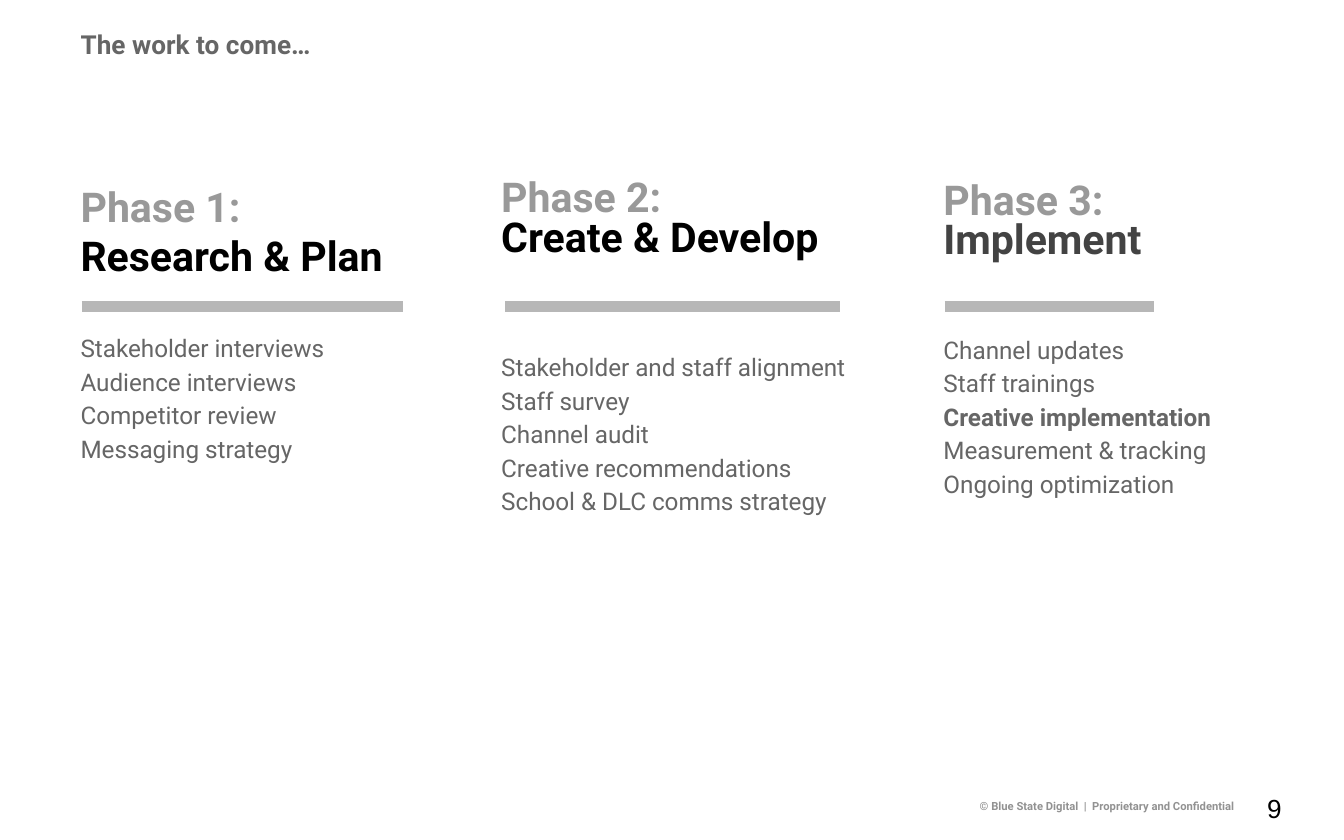
from dataclasses import dataclass

from lxml.etree import SubElement
from pptx import Presentation
from pptx.dml.color import RGBColor as Rgb
from pptx.enum.shapes import MSO_CONNECTOR as Link
from pptx.enum.text import MSO_ANCHOR as Anchor
from pptx.oxml.ns import qn
from pptx.util import Inches, Pt


@dataclass(frozen=True)
class Theme:
    face: str = "Roboto"
    plain: str = "Arial"
    black: str = "000000"
    dark: str = "434343"
    text: str = "666666"
    note: str = "929292"
    pale: str = "999999"
    rule: str = "B7B7B7"
    head: int = 22
    title: int = 14
    body: int = 13
    small: int = 6
    bar: int = 6
    tight: float = 0.8
    loose: float = 1.15


class Deck:
    """Slide on a square grid of 100 columns by 62.5 rows."""

    def __init__(self, theme):
        self.theme = theme
        self.cell = Inches(0.1)
        self.show = Presentation()
        self.show.slide_width = self.size(100)
        self.show.slide_height = self.size(62.5)
        self.slide = self.show.slides.add_slide(self.show.slide_layouts[6])

    def size(self, cells):
        return round(cells * self.cell)

    def text(self, area, lines, size, tones, bold=(), gap=1.0,
             pad=0.5, face=None, anchor=Anchor.TOP):
        """Write one paragraph per line; tones repeat, bold holds the bold lines."""
        box = self.slide.shapes.add_textbox(*map(self.size, area))
        frame = box.text_frame
        frame.word_wrap = True
        frame.vertical_anchor = anchor
        frame.margin_left = frame.margin_right = self.size(pad)
        frame.margin_top = frame.margin_bottom = self.size(pad)
        frame.text = "\n".join(lines)
        for i, para in enumerate(frame.paragraphs):
            para.line_spacing = gap
            for run in para.runs:
                font = run.font
                font.name = face or self.theme.face
                font.size = Pt(size)
                font.bold = run.text in bold
                font.color.rgb = Rgb.from_string(tones[i % len(tones)])

    def rule(self, left, right, row):
        x1, x2, y = map(self.size, (left, right, row))
        line = self.slide.shapes.add_connector(Link.STRAIGHT, x1, y, x2, y)
        line.line.color.rgb = Rgb.from_string(self.theme.rule)
        line.line.width = Pt(self.theme.bar)
        SubElement(line._element.spPr, qn("a:effectLst"))

    def phase(self, item):
        look = self.theme
        left, wide = item.left, item.wide
        self.text((left, item.top, wide, 8.5), item.head, look.head,
                  (look.pale, item.tone), item.head, item.gap)
        self.rule(*item.rule, 22.8)
        self.text((left, item.start, wide, 15), item.tasks, look.body,
                  (look.text,), item.bold, look.loose)


@dataclass
class Phase:
    head: tuple
    tasks: tuple
    left: float
    wide: float
    top: float
    start: float
    rule: tuple
    tone: str
    gap: float
    bold: tuple = ()


def main():
    look = Theme()
    deck = Deck(look)
    title = "The work to come…"
    foot = "© Blue State Digital  |  Proprietary and Confidential"
    phases = (
        Phase(("Phase 1:", "Research & Plan"),
              ("Stakeholder interviews", "Audience interviews",
               "Competitor review", "Messaging strategy"),
              5.5, 28.6, 13, 24, (6.1, 30), look.black, 1.0),
        Phase(("Phase 2:", "Create & Develop"),
              ("Stakeholder and staff alignment", "Staff survey",
               "Channel audit", "Creative recommendations",
               "School & DLC comms strategy"),
              36.8, 30.4, 13, 25.4, (37.6, 62.5), look.black, look.tight),
        Phase(("Phase 3:", "Implement"),
              ("Channel updates", "Staff trainings",
               "Creative implementation", "Measurement & tracking",
               "Ongoing optimization"),
              69.7, 26.1, 13.2, 24.1, (70.3, 85.9), look.dark, look.tight,
              ("Creative implementation",)),
    )
    deck.text((72.6, 59.3, 20.8, 1.5), (foot,), look.small, (look.note,),
              (foot,), look.tight, pad=0.3, anchor=Anchor.MIDDLE)
    deck.text((5.5, 0.9, 89, 5.2), (title,), look.title, (look.text,),
              (title,), 0.75, anchor=Anchor.MIDDLE)
    deck.text((93.3, 57.7, 3.5, 4.8), ("9",), look.title, (look.black,),
              pad=1, face=look.plain, anchor=Anchor.MIDDLE)
    for item in phases:
        deck.phase(item)
    deck.show.save("out.pptx")


if __name__ == "__main__":
    main()
